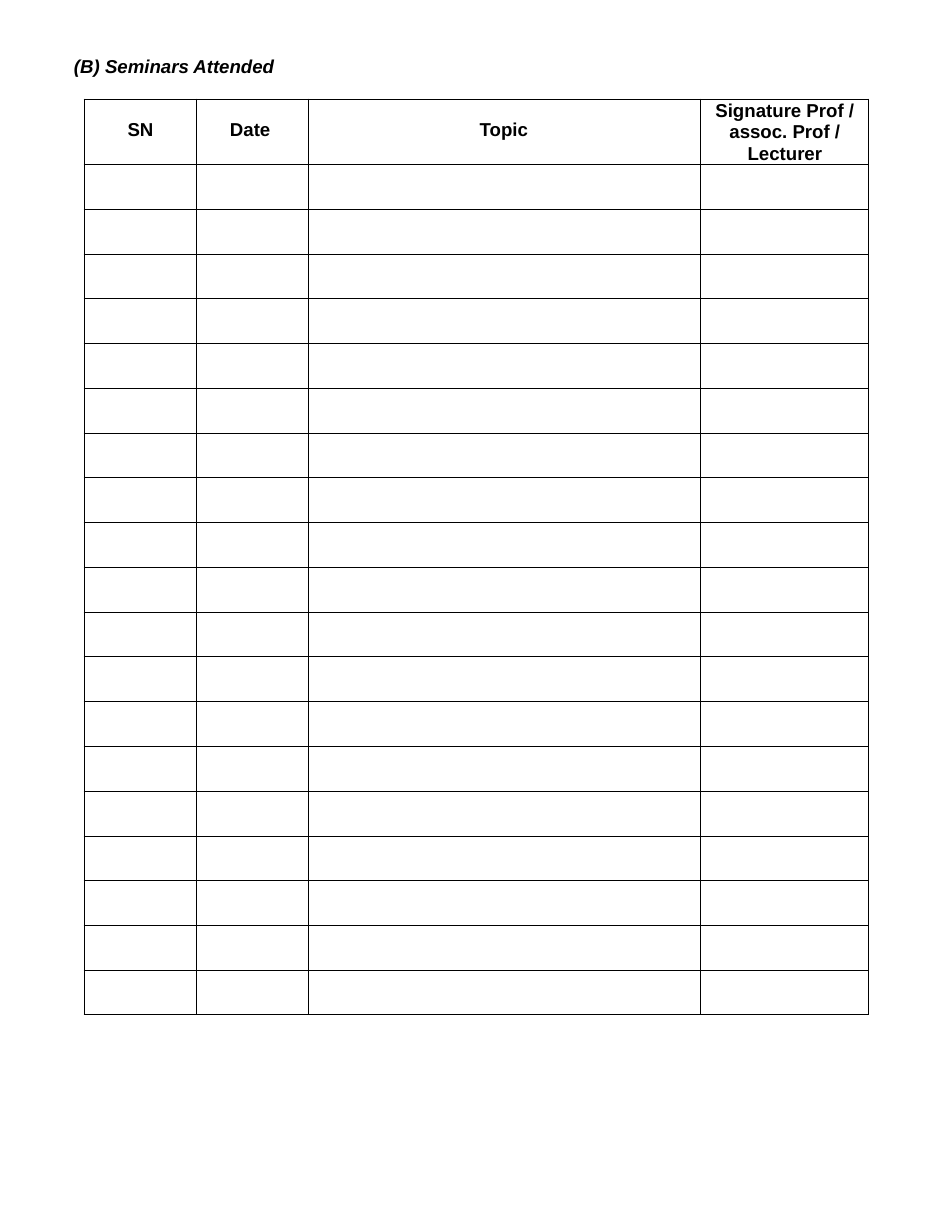
import pptx
import pptx.util
import pptx.dml.color
import pptx.enum.text
from lxml import etree
from pptx.oxml.ns import qn

PX = 914400 // 112
BLACK = pptx.dml.color.RGBColor(0, 0, 0)
ALIGN = pptx.enum.text.PP_ALIGN

HEADER_FONT = {"name": "Arial", "size": pptx.util.Pt(12), "bold": True}
TITLE_FONT = {**HEADER_FONT, "italic": True}


def write(paragraph, text, font_format):
    run = paragraph.add_run()
    run.text = text
    run.font.color.rgb = BLACK
    for attribute, value in font_format.items():
        setattr(run.font, attribute, value)


def add_borders(cell, widths):
    """Draw the left, right, top and bottom borders, with widths in points."""
    properties = cell._tc.get_or_add_tcPr()
    for position, (side, width) in enumerate(zip("LRTB", widths)):
        line = etree.Element(qn(f"a:ln{side}"), w=str(pptx.util.Pt(width)))
        fill = etree.SubElement(line, qn("a:solidFill"))
        etree.SubElement(fill, qn("a:srgbClr"), val=str(BLACK))
        properties.insert(position, line)


deck = pptx.Presentation()
deck.slide_width = 952 * PX
deck.slide_height = 1232 * PX
slide = deck.slides.add_slide(deck.slide_layouts[6])

# Title
title = slide.shapes.add_textbox(73 * PX, 54 * PX, 208 * PX, 26 * PX).text_frame
title_layout = {"word_wrap": True, "margin_left": PX, "margin_right": 0,
                "margin_top": PX, "margin_bottom": 0}
for attribute, value in title_layout.items():
    setattr(title, attribute, value)
title.paragraphs[0].space_before = pptx.util.Pt(1)
write(title.paragraphs[0], "(B) Seminars Attended", TITLE_FONT)

# Attendance table: heading, width, alignment, then left, right and top margins
COLUMNS = [
    ("SN", 112, ALIGN.CENTER, 1, 0, 20),
    ("Date", 112, ALIGN.LEFT, 34, 0, 20),
    ("Topic", 392, ALIGN.CENTER, 0, 0, 20),
    ("Signature Prof / assoc. Prof / Lecturer", 168, ALIGN.CENTER, 12, 10, 1),
]
SEMINARS = 19
GROUP = 5
HEADER_HEIGHT = 65 * PX
BODY_HEIGHT = 851 * PX

seminars = slide.shapes.add_table(
    SEMINARS + 1, len(COLUMNS), 84 * PX, 99 * PX,
    sum(column[1] for column in COLUMNS) * PX, HEADER_HEIGHT + BODY_HEIGHT).table
seminars.first_row = False
seminars.horz_banding = False

for index, row in enumerate(seminars.rows):
    row.height = BODY_HEIGHT // SEMINARS if index else HEADER_HEIGHT
    # A thinner rule closes the first row of every group
    top = 0.25 if index % GROUP == 1 else 0.5
    bottom = 0.25 if index % GROUP == 0 else 0.5
    for cell in row.cells:
        cell.margin_left = cell.margin_right = 0
        cell.margin_top = cell.margin_bottom = 0
        cell.fill.background()
        add_borders(cell, (0.5, 0.5, top, bottom))

for index, (heading, width, alignment, left, right, top) in enumerate(COLUMNS):
    seminars.columns[index].width = width * PX
    cell = seminars.cell(0, index)
    cell.margin_left = left * PX
    cell.margin_right = right * PX
    cell.margin_top = top * PX
    paragraph = cell.text_frame.paragraphs[0]
    paragraph.alignment = alignment
    paragraph.line_spacing = pptx.util.Pt(13.8)
    write(paragraph, heading, HEADER_FONT)

deck.save("out.pptx")
